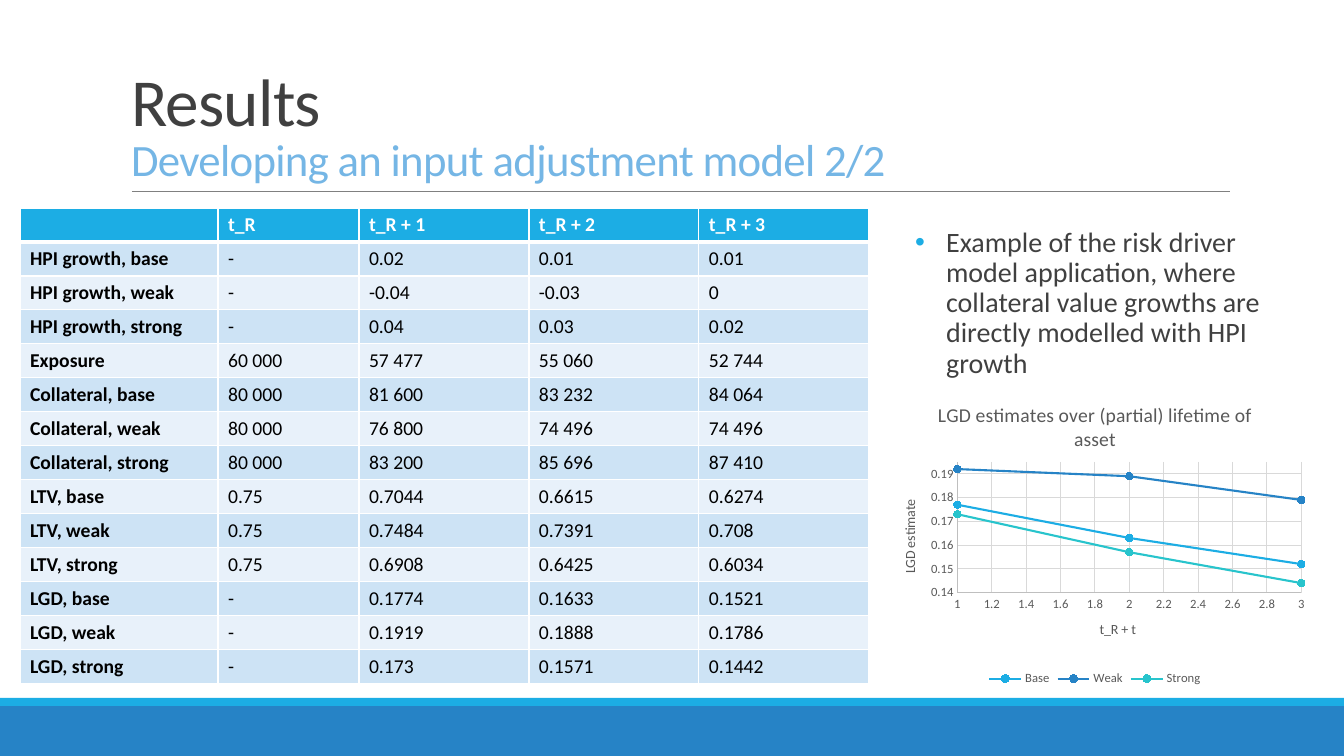
from lxml import etree
from pptx import Presentation
from pptx.chart.data import XyChartData
from pptx.dml.color import RGBColor
from pptx.enum.chart import XL_CHART_TYPE as ChartType, XL_LEGEND_POSITION as LegendPosition
from pptx.enum.chart import XL_MARKER_STYLE as MarkerStyle, XL_TICK_MARK as TickMark
from pptx.enum.shapes import MSO_CONNECTOR as Connector, MSO_SHAPE as Shape
from pptx.enum.text import MSO_ANCHOR as Anchor, MSO_AUTO_SIZE as AutoSize, PP_ALIGN as Align
from pptx.oxml import parse_xml
from pptx.oxml.ns import qn
from pptx.util import Emu, Pt

COLORS = {
    "white": "FFFFFF", "black": "000000", "text": "404040", "subtitle": "75B6E5",
    "rule": "808080", "cyan": "1CADE4", "blue": "2683C6", "teal": "28C4CC",
    "band": "CDE3F5", "light": "E8F1FA",
    "chart text": "595959", "axis": "BFBFBF", "grid": "D9D9D9",
}
RGB = {name: RGBColor.from_string(value) for name, value in COLORS.items()}


def px(*lengths):
    """Turn pixels (100.8 to the inch) into EMU."""
    return [Emu(round(length * 914400 / 100.8)) for length in lengths]


def set_font(font, size, color, bold=False):
    values = {"name": "Calibri", "size": Pt(size), "bold": bold}
    for name, value in values.items():
        setattr(font, name, value)
    font.color.rgb = RGB[color]


presentation = Presentation()
presentation.slide_width, presentation.slide_height = px(1344, 756)
slide = presentation.slides.add_slide(presentation.slide_layouts[1])
shapes = slide.shapes
title, body = slide.placeholders[0], slide.placeholders[1]

# Footer bands and title rule
for top, height, color in [(706, 50, "blue"), (698, 8, "cyan")]:
    band = shapes.add_shape(Shape.RECTANGLE, *px(0, top, 1344, height))
    band.shadow.inherit = False
    band.fill.solid()
    band.fill.fore_color.rgb = RGB[color]
    band.line.fill.background()

rule = shapes.add_connector(Connector.STRAIGHT, *px(132, 191, 1230, 191))
rule.line.color.rgb = RGB["rule"]
rule.line.width = Pt(0.5)
etree.SubElement(rule._element.spPr, qn("a:effectLst"))

# Title and bullet text
for shape, box, anchor, spacing in [
    (title, (121, 31, 1109, 160), Anchor.BOTTOM, 0.85),
    (body, (905, 223, 405, 163), Anchor.TOP, 0.9),
]:
    shape.left, shape.top, shape.width, shape.height = px(*box)
    frame_values = {"auto_size": AutoSize.NONE, "word_wrap": True, "vertical_anchor": anchor}
    for name, value in frame_values.items():
        setattr(shape.text_frame, name, value)
    paragraph_values = {"alignment": Align.LEFT, "line_spacing": spacing, "space_before": Pt(0)}
    for name, value in paragraph_values.items():
        setattr(shape.text_frame.paragraphs[0], name, value)

heading = title.text_frame.paragraphs[0]
for text, size, color in [
    ("Results", 48, "text"),
    ("Developing an input adjustment model 2/2", 32, "subtitle"),
]:
    if heading.runs:
        heading.add_line_break()
    run = heading.add_run()
    run.text = text
    set_font(run.font, size, color)
    run.font._element.set("spc", "-50")

bullet = body.text_frame.paragraphs[0]
run = bullet.add_run()
run.text = ("Example of the risk driver model application, where collateral value growths "
            "are directly modelled with HPI growth")
set_font(run.font, 20, "text")
properties = bullet._p.get_or_add_pPr()
indent = px(31)[0]
properties.set("marL", str(indent))
properties.set("indent", str(-indent))
bullet_color = etree.SubElement(properties, qn("a:buClr"))
etree.SubElement(bullet_color, qn("a:srgbClr"), val=COLORS["cyan"])
etree.SubElement(properties, qn("a:buFont"), typeface="Arial")
etree.SubElement(properties, qn("a:buChar"), char="•")

# Results table
ROWS = [
    ("", "t_R", "t_R + 1", "t_R + 2", "t_R + 3"),
    ("HPI growth, base", "-", "0.02", "0.01", "0.01"),
    ("HPI growth, weak", "-", "-0.04", "-0.03", "0"),
    ("HPI growth, strong", "-", "0.04", "0.03", "0.02"),
    ("Exposure", "60 000", "57 477", "55 060", "52 744"),
    ("Collateral, base", "80 000", "81 600", "83 232", "84 064"),
    ("Collateral, weak", "80 000", "76 800", "74 496", "74 496"),
    ("Collateral, strong", "80 000", "83 200", "85 696", "87 410"),
    ("LTV, base", "0.75", "0.7044", "0.6615", "0.6274"),
    ("LTV, weak", "0.75", "0.7484", "0.7391", "0.708"),
    ("LTV, strong", "0.75", "0.6908", "0.6425", "0.6034"),
    ("LGD, base", "-", "0.1774", "0.1633", "0.1521"),
    ("LGD, weak", "-", "0.1919", "0.1888", "0.1786"),
    ("LGD, strong", "-", "0.173", "0.1571", "0.1442"),
]
WIDTHS = px(198, 141, 170, 170, 170)
table = shapes.add_table(len(ROWS), len(WIDTHS), *px(20, 208, 849, 34 * len(ROWS))).table
for column, width in zip(table.columns, WIDTHS):
    column.width = width
for row_index, row in enumerate(ROWS):
    table.rows[row_index].height = px(34)[0]
    header = row_index == 0
    fill = "cyan" if header else "band" if row_index % 2 else "light"
    for column_index, text in enumerate(row):
        cell = table.cell(row_index, column_index)
        paragraph = cell.text_frame.paragraphs[0]
        if text:
            run = paragraph.add_run()
            run.text = text
            set_font(run.font, 14, "white" if header else "black", header or column_index == 0)
        else:
            etree.SubElement(paragraph._p, qn("a:endParaRPr"), sz="1400")
        cell_properties = cell._tc.get_or_add_tcPr()
        for side in "LRTB":
            thick = (side == "B" and header) or (side == "T" and row_index == 1)
            border = etree.SubElement(cell_properties, qn(f"a:ln{side}"), w=str(Pt(3 if thick else 1)))
            border_fill = etree.SubElement(border, qn("a:solidFill"))
            etree.SubElement(border_fill, qn("a:srgbClr"), val=COLORS["white"])
        cell.fill.solid()
        cell.fill.fore_color.rgb = RGB[fill]

# LGD chart
SERIES = [
    ("Base", "cyan", (0.177, 0.163, 0.152)),
    ("Weak", "blue", (0.192, 0.189, 0.179)),
    ("Strong", "teal", (0.173, 0.157, 0.144)),
]
chart_data = XyChartData()
for name, color, estimates in SERIES:
    points = chart_data.add_series(name)
    for year, estimate in enumerate(estimates, start=1):
        points.add_data_point(year, estimate)
chart = shapes.add_chart(ChartType.XY_SCATTER_LINES, *px(880, 386, 430, 304), chart_data).chart
set_font(chart.font, 9, "chart text")
chart.plots[0].vary_by_categories = False

for series, (name, color, estimates) in zip(chart.plots[0].series, SERIES):
    series.smooth = False
    series.format.line.color.rgb = RGB[color]
    series.format.line.width = Pt(1.5)
    series.marker.style = MarkerStyle.CIRCLE
    series.marker.size = 5
    series.marker.format.fill.solid()
    series.marker.format.fill.fore_color.rgb = RGB[color]
    series.marker.format.line.color.rgb = RGB[color]

for axis, low, high, step in [
    (chart.category_axis, 1, 3, 0.2),
    (chart.value_axis, 0.14, 0.195, 0.01),
]:
    axis_values = {
        "minimum_scale": low, "maximum_scale": high, "major_unit": step,
        "major_tick_mark": TickMark.NONE, "minor_tick_mark": TickMark.NONE,
        "has_major_gridlines": True,
    }
    for name, value in axis_values.items():
        setattr(axis, name, value)
    set_font(axis.tick_labels.font, 9, "chart text")
    axis.tick_labels.number_format = "General"
    axis.tick_labels.number_format_is_linked = False
    for line, color in [(axis.format.line, "axis"), (axis.major_gridlines.format.line, "grid")]:
        line.color.rgb = RGB[color]
        line.width = Pt(0.75)

for owner, text, size in [
    (chart, "LGD estimates over (partial) lifetime of asset", 14),
    (chart.category_axis, "t_R + t", 10),
    (chart.value_axis, "LGD estimate", 10),
]:
    owner.has_title = True
    if owner is chart.value_axis or text == "LGD estimate":
        owner.axis_title.text_frame._txBody.bodyPr.set("rot", "-5400000")
        owner.axis_title.text_frame._txBody.bodyPr.set("vert", "horz")
    frame = (chart.chart_title if owner is chart else owner.axis_title).text_frame
    run = frame.paragraphs[0].add_run()
    run.text = text
    set_font(run.font, size, "chart text")

chart.has_legend = True
chart.legend.position = LegendPosition.BOTTOM
chart.legend.include_in_layout = False
set_font(chart.legend.font, 9, "chart text")

# Inner plot area as fractions of the chart
plot_area = chart._chartSpace.chart.plotArea
for layout in plot_area.findall(qn("c:layout")):
    plot_area.remove(layout)
plot_area.insert(0, parse_xml(
    '<c:layout xmlns:c="http://schemas.openxmlformats.org/drawingml/2006/chart"><c:manualLayout>'
    '<c:layoutTarget val="inner"/><c:xMode val="edge"/><c:yMode val="edge"/>'
    '<c:x val="0.18"/><c:y val="0.25"/><c:w val="0.8"/><c:h val="0.43"/>'
    '</c:manualLayout></c:layout>'))

presentation.save("out.pptx")
